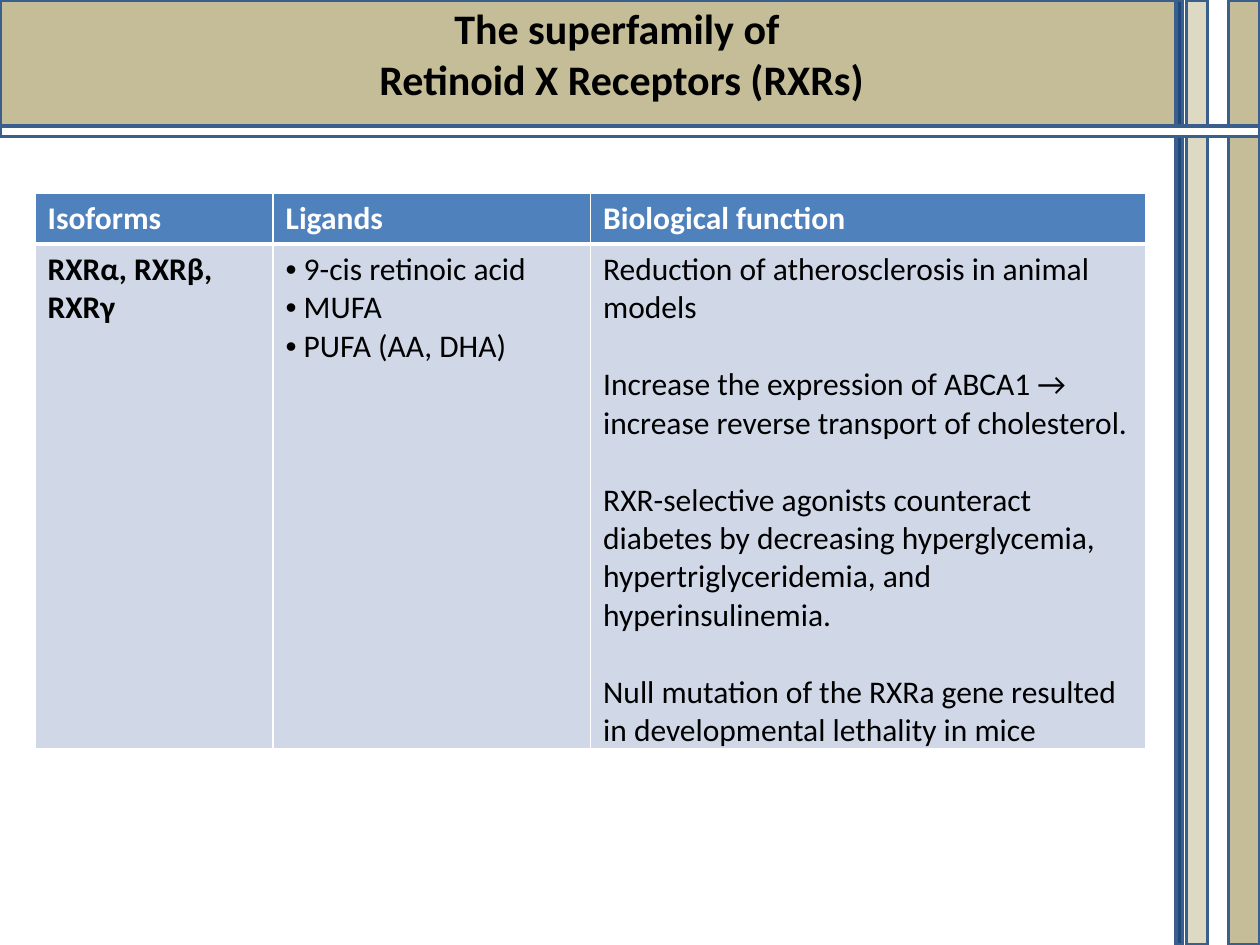
from lxml.etree import SubElement
from pptx import Presentation
from pptx.dml.color import RGBColor
from pptx.enum.shapes import MSO_SHAPE
from pptx.enum.text import MSO_ANCHOR, MSO_AUTO_SIZE, PP_ALIGN
from pptx.oxml import parse_xml
from pptx.oxml.ns import nsdecls, qn
from pptx.util import Pt

COLORS = {
    "tan": "C4BD97", "light_tan": "DDD9C3", "navy": "1F497D", "outline": "3A5F8C",
    "header": "4F81BD", "body": "D0D8E8", "white": "FFFFFF", "black": "000000",
}
FONT = "Calibri"
LINE_HEIGHT = 22
BULLET_INDENT = 10.3
HEADINGS = ["Isoforms", "Ligands", "Biological function"]
ISOFORMS = ["RXRα, RXRβ, RXRγ"]
LIGANDS = ["9-cis retinoic acid", "MUFA", "PUFA (AA, DHA)"]
FUNCTIONS = [
    "Reduction of atherosclerosis in animal models",
    "Increase the expression of ABCA1 → increase reverse transport of cholesterol.",
    "RXR-selective agonists counteract diabetes by decreasing hyperglycemia, "
    "hypertriglyceridemia, and hyperinsulinemia.",
    "Null mutation of the RXRa gene resulted in developmental lethality in mice",
]


def rgb(name):
    """Return the named palette colour."""
    return RGBColor.from_string(COLORS[name])


def style_para(para, size, color, bold):
    """Set the font of a whole paragraph."""
    para.font.name = FONT
    para.font.size = Pt(size)
    para.font.bold = bold
    para.font.color.rgb = rgb(color)


def add_frame(page, left, top, width, height):
    """Draw the title band, the right-hand stripes and the rule over them."""
    bars = [
        (0, 0, 672, 72, "tan"),
        (width - 18, 0, 18, height, "tan"),
        (678, 0, 12, height, "light_tan"),
        (672, 0, 3.6, height, "navy"),
        (0, 72, width, 6, "white"),
    ]
    for x, y, bar_width, bar_height, color in bars:
        bar = page.shapes.add_shape(
            MSO_SHAPE.RECTANGLE, Pt(left + x), Pt(top + y), Pt(bar_width), Pt(bar_height))
        bar.shadow.inherit = False
        bar.fill.solid()
        bar.fill.fore_color.rgb = rgb(color)
        bar.line.color.rgb = rgb("outline")
        bar.line.width = Pt(2)


def place_title(page, left, top, width, height, lines):
    """Move the title placeholder in front of the band and fill it."""
    title = page.shapes.title
    title.element.getparent().append(title.element)
    title.left, title.top, title.width, title.height = map(Pt, (left, top, width, height))
    frame = title.text_frame
    frame.text = "\n".join(lines)
    frame.word_wrap = False
    frame.auto_size = MSO_AUTO_SIZE.SHAPE_TO_FIT_TEXT
    frame.vertical_anchor = MSO_ANCHOR.TOP
    for para in frame.paragraphs:
        para.alignment = PP_ALIGN.CENTER
        style_para(para, 24, "black", True)


def add_bullet(para):
    """Give a paragraph a hanging round bullet."""
    properties = para._p.get_or_add_pPr()
    properties.set("marL", str(Pt(BULLET_INDENT)))
    properties.set("indent", str(-Pt(BULLET_INDENT)))
    SubElement(properties, qn("a:buFont"), typeface="Arial")
    SubElement(properties, qn("a:buChar"), char="•")


def set_borders(cell, top, bottom):
    """Draw white borders around a cell, with the given top and bottom widths."""
    properties = cell._tc.get_or_add_tcPr()
    widths = {"lnL": 1, "lnR": 1, "lnT": top, "lnB": bottom}
    for index, (side, width) in enumerate(widths.items()):
        properties.insert(index, parse_xml(
            f'<a:{side} {nsdecls("a")} w="{Pt(width)}"><a:solidFill>'
            f'<a:srgbClr val="{COLORS["white"]}"/></a:solidFill></a:{side}>'))


def fill_cell(cell, lines, fill, color, bold, bulleted=False, gap=0):
    """Write paragraphs into a cell and colour it."""
    cell.fill.solid()
    cell.fill.fore_color.rgb = rgb(fill)
    cell.text = "\n".join(lines)
    for index, para in enumerate(cell.text_frame.paragraphs):
        if index and gap:
            para.space_before = Pt(gap)
        if bulleted:
            add_bullet(para)
        style_para(para, 18, color, bold)


def add_receptor_table(page, left, top, width, height):
    """Build the table of isoforms, ligands and functions."""
    table = page.shapes.add_table(
        2, len(HEADINGS), Pt(left), Pt(top), Pt(width), Pt(height)).table
    header_height = 29.2
    table.rows[0].height = Pt(header_height)
    table.rows[1].height = Pt(height - header_height)
    for column, share in zip(table.columns, (3, 4, 7)):
        column.width = Pt(width * share / 14)
    for cell, heading in zip(table.rows[0].cells, HEADINGS):
        fill_cell(cell, [heading], "header", "white", True)
        set_borders(cell, 1, 3)
    isoforms, ligands, functions = table.rows[1].cells
    fill_cell(isoforms, ISOFORMS, "body", "black", True)
    fill_cell(ligands, LIGANDS, "body", "black", False, bulleted=True)
    fill_cell(functions, FUNCTIONS, "body", "black", False, gap=LINE_HEIGHT)
    functions.margin_bottom = 0
    for cell in table.rows[1].cells:
        set_borders(cell, 3, 1)


def main():
    """Create the slide and save it."""
    deck = Presentation()
    deck.slide_width, deck.slide_height = Pt(720), Pt(540)
    page = deck.slides.add_slide(deck.slide_layouts[5])
    add_frame(page, 0, 0, 720, 540)
    place_title(page, 208, -2, 294.5, 65.5,
                ["The superfamily of ", "Retinoid X Receptors (RXRs)"])
    add_receptor_table(page, 20, 110.2, 635, 317.5)
    deck.save("out.pptx")


if __name__ == "__main__":
    main()
